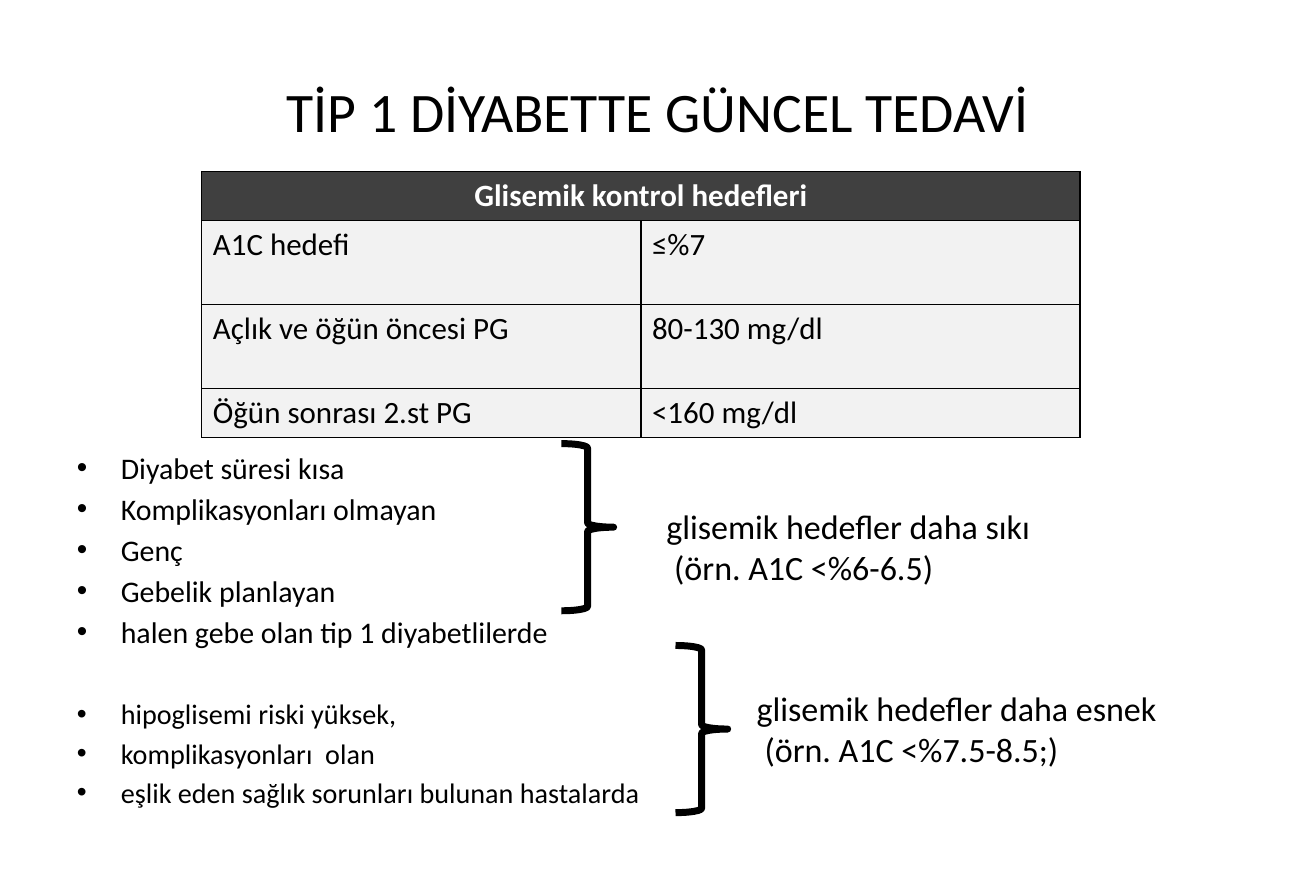
from lxml import etree
from pptx import Presentation
from pptx.dml.color import RGBColor
from pptx.enum.shapes import MSO_SHAPE
from pptx.enum.text import MSO_ANCHOR, MSO_AUTO_SIZE, PP_ALIGN
from pptx.oxml.ns import qn
from pptx.util import Cm, Pt

FONT = "Calibri"
BLACK, WHITE, DARK, LIGHT = "000000", "FFFFFF", "404040", "F2F2F2"
LEFT, CENTER = PP_ALIGN.LEFT, PP_ALIGN.CENTER
MIDDLE = MSO_ANCHOR.MIDDLE
NO_FIT = MSO_AUTO_SIZE.NONE
RIGHT_BRACE = MSO_SHAPE.RIGHT_BRACE
TITLE_AND_CONTENT = 1

TARGETS = [
    ("A1C hedefi", "≤%7"),
    ("Açlık ve öğün öncesi PG", "80-130 mg/dl"),
    ("Öğün sonrası 2.st PG", "<160 mg/dl"),
]
ROW_HEIGHTS = [1.11, 1.91, 1.91, 1.11]
STRICT_PATIENTS = [
    "Diyabet süresi kısa",
    "Komplikasyonları olmayan",
    "Genç",
    "Gebelik planlayan",
    "halen gebe olan tip 1 diyabetlilerde",
]
FLEXIBLE_PATIENTS = [
    "hipoglisemi riski yüksek,",
    "komplikasyonları  olan",
    "eşlik eden sağlık sorunları bulunan hastalarda",
]


def rgb(value):
    return RGBColor.from_string(value)


def place(shape, left, top, width, height):
    shape.left, shape.top = Cm(left), Cm(top)
    shape.width, shape.height = Cm(width), Cm(height)


def write(paragraph, text, size, color=BLACK, bold=False, align=LEFT, before=0):
    paragraph.text = text
    paragraph.alignment = align
    paragraph.space_before = Pt(before)
    font = paragraph.font
    font.name, font.size, font.bold = FONT, Pt(size), bold
    font.color.rgb = rgb(color)


def set_indent(paragraph, margin, first_line=0):
    properties = paragraph._p.get_or_add_pPr()
    properties.set("marL", str(Cm(margin)))
    properties.set("indent", str(Cm(first_line)))
    return properties


def add_title(slide, text):
    title = slide.shapes.title
    place(title, 1.5, 0.81, 27, 3.38)
    title.text_frame.auto_size = NO_FIT
    title.text_frame.vertical_anchor = MIDDLE
    write(title.text_frame.paragraphs[0], text, 36, align=CENTER)


def add_patient_list(slide):
    body = slide.placeholders[1]
    place(body, 1.5, 10.11, 27, 7.95)
    frame = body.text_frame
    frame.auto_size = NO_FIT
    # The second group starts lower and is set slightly smaller
    groups = [(STRICT_PATIENTS, 19.3, 0), (FLEXIBLE_PATIENTS, 18.2, 30.5)]
    for patients, size, group_gap in groups:
        for number, patient in enumerate(patients):
            first = patients is STRICT_PATIENTS and number == 0
            paragraph = frame.paragraphs[0] if first else frame.add_paragraph()
            properties = set_indent(paragraph, 1, -1)
            etree.SubElement(properties, qn("a:buChar"), char="•")
            write(paragraph, patient, size, before=3.4 if number else group_gap)


def add_borders(cell):
    properties = cell._tc.get_or_add_tcPr()
    for side in ("a:lnL", "a:lnR", "a:lnT", "a:lnB"):
        line = etree.SubElement(properties, qn(side), w=str(Pt(1)))
        fill = etree.SubElement(line, qn("a:solidFill"))
        etree.SubElement(fill, qn("a:srgbClr"), val=BLACK)


def fill_cell(cell, text, fill, **text_format):
    add_borders(cell)
    cell.fill.solid()
    cell.fill.fore_color.rgb = rgb(fill)
    write(cell.text_frame.paragraphs[0], text, 20, **text_format)


def add_target_table(slide):
    frame = slide.shapes.add_table(
        len(ROW_HEIGHTS), 2, Cm(4.6), Cm(3.91), Cm(20.02), Cm(sum(ROW_HEIGHTS)))
    table = frame.table
    for row, height in zip(table.rows, ROW_HEIGHTS):
        row.height = Cm(height)

    # Heading across both columns
    table.cell(0, 0).merge(table.cell(0, 1))
    fill_cell(table.cell(0, 0), "Glisemik kontrol hedefleri", DARK,
              color=WHITE, bold=True, align=CENTER)
    add_borders(table.cell(0, 1))

    for row, target in enumerate(TARGETS, start=1):
        for column, text in enumerate(target):
            fill_cell(table.cell(row, column), text, LIGHT)


def add_goal(slide, left, top, width, goal, example):
    box = slide.shapes.add_textbox(Cm(left), Cm(top), Cm(width), Cm(2.13))
    frame = box.text_frame
    frame.word_wrap = False
    write(frame.paragraphs[0], goal, 22)
    example_line = frame.add_paragraph()
    set_indent(example_line, 0.18)
    write(example_line, example, 22)


def add_brace(slide, left, top):
    brace = slide.shapes.add_shape(
        RIGHT_BRACE, Cm(left), Cm(top), Cm(1.19), Cm(3.81))
    brace.shadow.inherit = False
    brace.fill.background()
    brace.line.color.rgb = rgb(BLACK)
    brace.line.width = Pt(4.5)


def main():
    presentation = Presentation()
    presentation.slide_width, presentation.slide_height = Cm(30), Cm(20.19)
    layout = presentation.slide_layouts[TITLE_AND_CONTENT]
    slide = presentation.slides.add_slide(layout)

    add_title(slide, "TİP 1 DİYABETTE GÜNCEL TEDAVİ")
    add_patient_list(slide)
    add_target_table(slide)

    # Glycaemic goal for each patient group
    add_goal(slide, 14.94, 11.4, 8.89,
             "glisemik hedefler daha sıkı", "(örn. A1C <%6-6.5)")
    add_goal(slide, 17, 15.54, 9.73,
             "glisemik hedefler daha esnek", "(örn. A1C <%7.5-8.5;)")
    add_brace(slide, 12.8, 10.11)
    add_brace(slide, 15.4, 14.71)

    presentation.save("out.pptx")


if __name__ == "__main__":
    main()
